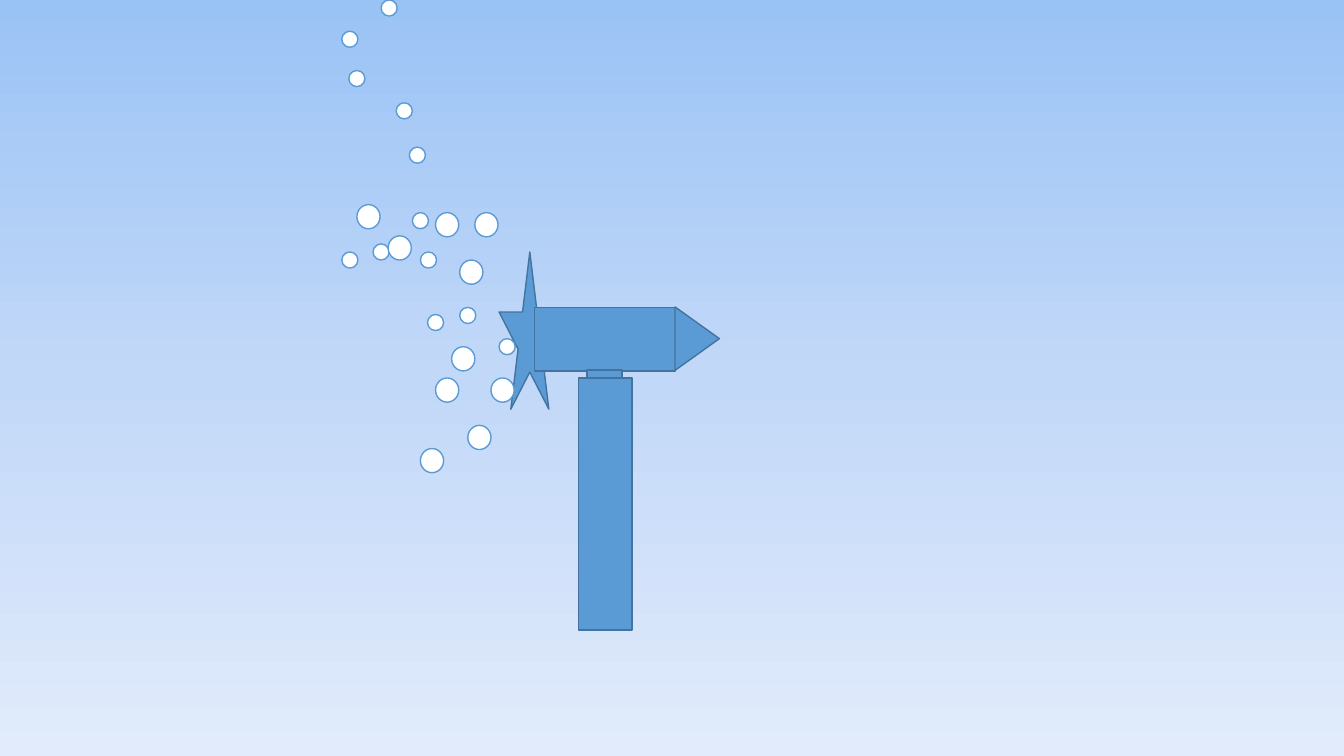
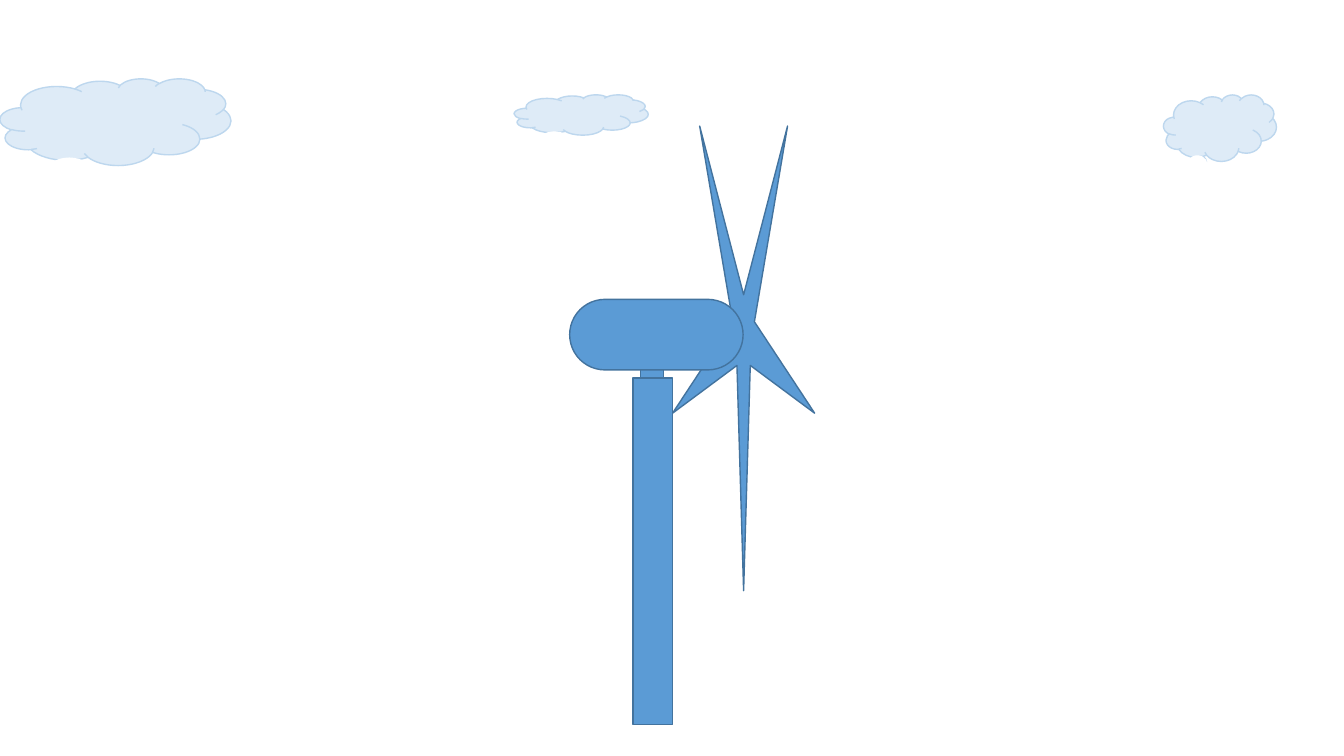
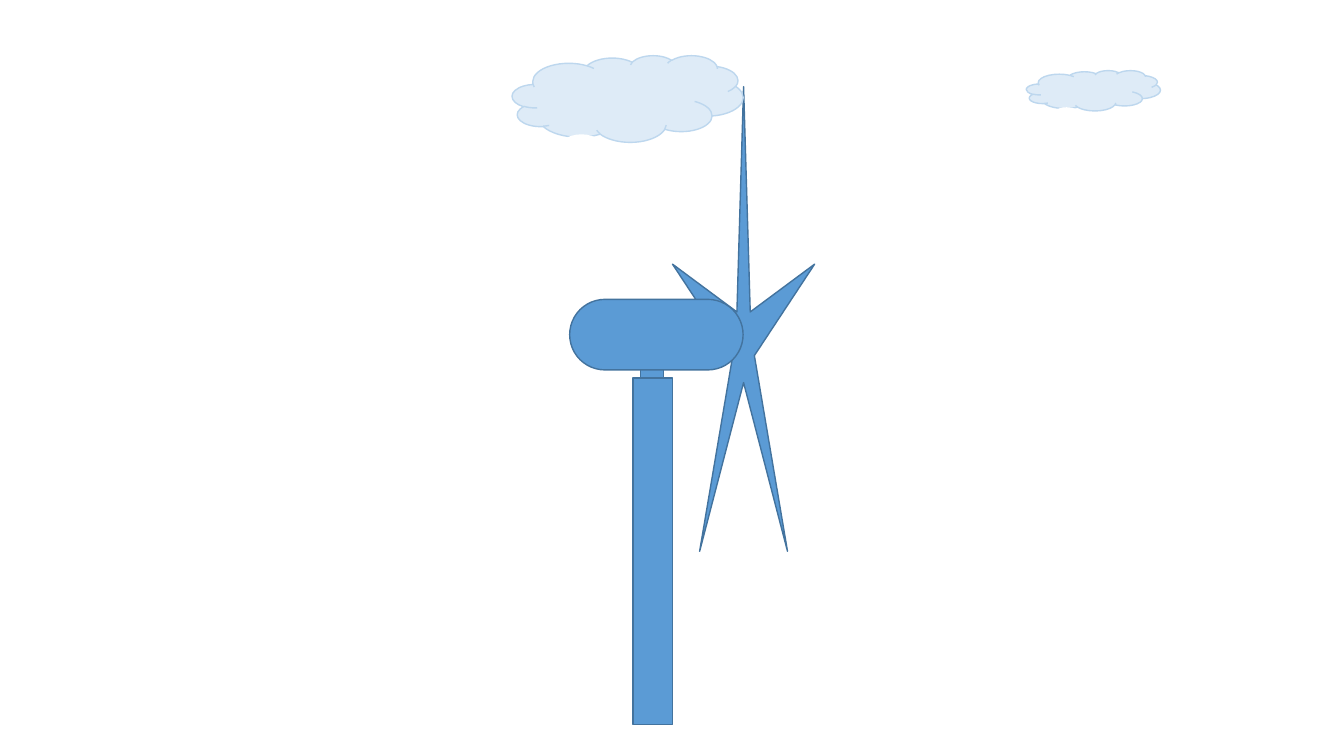
from copy import deepcopy

from pptx import Presentation
from pptx import util as u
from pptx.dml.color import RGBColor
from pptx.enum.shapes import MSO_SHAPE as S
from pptx.oxml.ns import qn

COLORS = {
    "metal": "5B9BD5",
    "edge": "43739E",
    "white": "FFFFFF",
    "cloud": "DEEBF7",
    "cloud_edge": "BDD7EE",
    "water_top": "9AC3F5",
    "water_middle": "C2D8F8",
    "water_bottom": "E1EBFB",
}
SMALL_BUBBLE = (0.16, 0.16)
LARGE_BUBBLE = (0.23, 0.24)
SMALL_SPOTS = [
    (4.09, 2.11), (4.17, 2.5), (3.39, 2.5), (3.7, 2.42), (4.24, 3.12),
    (4.95, 3.36), (4.56, 3.05), (3.78, 0), (3.39, 0.31), (3.93, 1.02),
    (3.46, 0.7), (4.06, 1.46),
]
LARGE_SPOTS = [
    (4.56, 2.58), (4.64, 4.22), (4.17, 4.45), (4.87, 3.75), (3.54, 2.03),
    (4.71, 2.11), (4.32, 3.75), (4.48, 3.44), (4.32, 2.11), (3.85, 2.34),
]
WIND_SCENES = [
    (1.25, 180, [(11.54, 0.94, 1.12, 0.66), (5.1, 0.94, 1.33, 0.4), (0, 0.78, 2.29, 0.86)]),
    (0.86, 0, [(10.18, 0.7, 1.33, 0.4), (5.08, 0.55, 2.29, 0.86)]),
]


def rgb(name):
    return RGBColor.from_string(COLORS[name])


def add_part(shapes, preset, box, fill="metal", line="edge", rotation=0):
    part = shapes.add_shape(preset, *(u.Inches(length) for length in box))
    part.shadow.inherit = False
    part.rotation = rotation
    part.fill.solid()
    part.fill.fore_color.rgb = rgb(fill)
    if line:
        part.line.color.rgb = rgb(line)
        part.line.width = u.Pt(1)
    else:
        part.line.fill.background()
    return part


def add_bubbles(shapes, spots, size):
    for spot in spots:
        add_part(shapes, S.OVAL, spot + size, "white", "metal")


def add_cloud(shapes, left, top, width, height):
    group = shapes.add_group_shape().shapes
    add_part(group, S.CLOUD_CALLOUT, (left, top, width, height), "cloud", "cloud_edge")
    tail_cover = (left + 0.21 * width, top + 0.91 * height, 0.18 * width, 0.27 * height)
    add_part(group, S.OVAL, tail_cover, "white", None)


def add_water(slide):
    fill = slide.background.fill
    fill.gradient()
    fill.gradient_angle = 270
    stop_list = slide.element.find(".//" + qn("a:gsLst"))
    stop_list.insert(1, deepcopy(stop_list[0]))
    levels = [(0, "water_top"), (0.5, "water_middle"), (1, "water_bottom")]
    for stop, (position, color) in zip(fill.gradient_stops, levels):
        stop.position = position
        stop.color.rgb = rgb(color)


def add_water_turbine(shapes):
    add_part(shapes, S.STAR_5_POINT, (4.95, 2.5, 0.61, 1.56))
    add_part(shapes, S.RECTANGLE, (5.74, 3.75, 0.53, 2.5))
    add_part(shapes, S.RECTANGLE, (5.3, 3.05, 1.4, 0.63))
    add_part(shapes, S.RECTANGLE, (5.82, 3.67, 0.35, 0.08))
    add_part(shapes, S.ISOSCELES_TRIANGLE, (6.6, 3.14, 0.63, 0.44), rotation=90)


def add_wind_turbine(shapes, rotor_top, rotor_angle):
    rotor = add_part(shapes, S.STAR_5_POINT, (6.67, rotor_top, 1.41, 4.61), rotation=rotor_angle)
    rotor.adjustments[0] = 0.076
    add_part(shapes, S.RECTANGLE, (6.35, 3.59, 0.23, 0.16))
    add_part(shapes, S.RECTANGLE, (6.28, 3.75, 0.39, 3.44))
    nacelle = add_part(shapes, S.ROUNDED_RECTANGLE, (5.65, 2.97, 1.72, 0.7))
    nacelle.adjustments[0] = 0.5


def main():
    deck = Presentation()
    deck.slide_width, deck.slide_height = u.Inches(13.33), u.Inches(7.5)
    blank = deck.slide_layouts[6]

    sea = deck.slides.add_slide(blank)
    add_water(sea)
    add_water_turbine(sea.shapes)
    add_bubbles(sea.shapes, SMALL_SPOTS, SMALL_BUBBLE)
    add_bubbles(sea.shapes, LARGE_SPOTS, LARGE_BUBBLE)

    for rotor_top, rotor_angle, clouds in WIND_SCENES:
        sky = deck.slides.add_slide(blank)
        add_wind_turbine(sky.shapes, rotor_top, rotor_angle)
        for cloud in clouds:
            add_cloud(sky.shapes, *cloud)

    deck.save("out.pptx")


if __name__ == "__main__":
    main()
